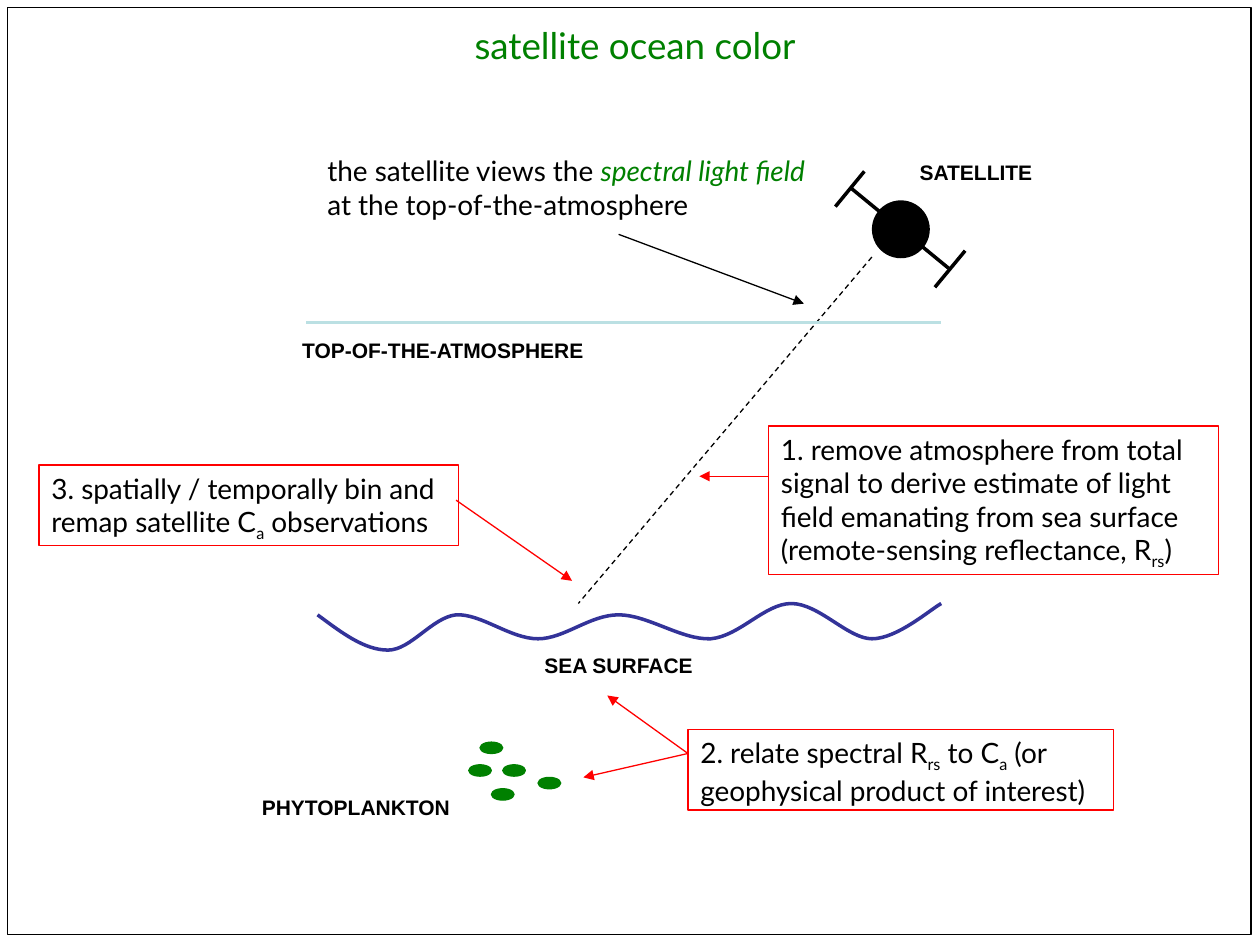
import pptx
import pptx.util
import pptx.dml.color
import pptx.enum.dml
import pptx.enum.shapes
import pptx.enum.text
import pptx.oxml
import pptx.oxml.ns
from lxml import etree

Inches = pptx.util.Inches
Pt = pptx.util.Pt
RGB = pptx.dml.color.RGBColor
SHAPE = pptx.enum.shapes.MSO_SHAPE
ALIGN = pptx.enum.text.PP_ALIGN
qn = pptx.oxml.ns.qn

BLACK = RGB(0, 0, 0)
GREEN = RGB(0, 0x80, 0)
RED = RGB(0xFF, 0, 0)
NAVY = RGB(0x33, 0x33, 0x99)
SKY = RGB(0xBB, 0xE0, 0xE3)

# Start point, then two handles and an end point for each curve
WAVE = [
    (2.52, 4.88),
    (2.71, 5.02), (2.89, 5.16), (3.08, 5.16),
    (3.26, 5.16), (3.43, 4.9), (3.62, 4.88),
    (3.82, 4.87), (4.05, 5.07), (4.27, 5.07),
    (4.48, 5.07), (4.68, 4.88), (4.91, 4.88),
    (5.14, 4.88), (5.41, 5.08), (5.64, 5.07),
    (5.87, 5.05), (6.07, 4.79), (6.28, 4.79),
    (6.5, 4.79), (6.73, 5.07), (6.92, 5.07),
    (7.12, 5.07), (7.38, 4.84), (7.47, 4.79),
]
CELLS = [(3.72, 6.07), (3.9, 6.26), (3.99, 6.07), (4.27, 6.17), (3.81, 5.89)]
LABELS = [
    ("SEA SURFACE", (3.58, 5.13, 2.66, 0.33), ALIGN.CENTER),
    ("TOP-OF-THE-ATMOSPHERE", (2.3, 2.63, 2.7, 0.33), ALIGN.LEFT),
    ("SATELLITE", (7.2, 1.22, 1.28, 0.33), ALIGN.LEFT),
    ("PHYTOPLANKTON", (1.98, 6.26, 2.25, 0.33), ALIGN.LEFT),
]
# Box, text pieces (every second one is a subscript), arrow start, arrow tips
STEPS = [
    ((6.1, 3.38, 3.57, 1.18),
     ["1. remove atmosphere from total signal to derive estimate of light "
      "field emanating from sea surface (remote-sensing reflectance, R",
      "rs", ")"],
     (6.1, 3.78), [(5.55, 3.78)]),
    ((5.46, 5.79, 3.38, 0.64),
     ["2. relate spectral R", "rs", " to C", "a",
      " (or geophysical product of interest)"],
     (5.46, 5.98), [(4.82, 5.52), (4.63, 6.17)]),
    ((0.31, 3.69, 3.33, 0.64),
     ["3. spatially / temporally bin and remap satellite C", "a",
      " observations"],
     (3.62, 3.97), [(4.54, 4.61)]),
]


def add_form(shapes, kind, box, fill=None, line=None):
    form = shapes.add_shape(kind, *map(Inches, box))
    form.shadow.inherit = False
    if fill is None:
        form.fill.background()
    else:
        form.fill.solid()
        form.fill.fore_color.rgb = fill
    if line is None:
        form.line.fill.background()
    else:
        form.line.color.rgb = line
        form.line.width = Pt(0.75)
    return form


def add_line(shapes, start, end, color=BLACK, width=0.75, dash=False, arrow=False):
    line = shapes.add_connector(pptx.enum.shapes.MSO_CONNECTOR.STRAIGHT,
                                *map(Inches, start + end))
    line.line.color.rgb = color
    line.line.width = Pt(width)
    if dash:
        line.line.dash_style = pptx.enum.dml.MSO_LINE.DASH
    if arrow:
        tail = etree.SubElement(line.line._get_or_add_ln(), qn("a:tailEnd"))
        tail.set("type", "triangle")
    etree.SubElement(line._element.spPr, qn("a:effectLst"))


def set_text(form, pieces, size, face="Lato", color=BLACK, align=ALIGN.LEFT):
    """Write the pieces as runs of one paragraph and return the paragraph."""
    frame = form.text_frame
    frame.word_wrap = True
    frame.auto_size = pptx.enum.text.MSO_AUTO_SIZE.SHAPE_TO_FIT_TEXT
    frame.vertical_anchor = pptx.enum.text.MSO_ANCHOR.TOP
    para = frame.paragraphs[0]
    para.alignment = align
    para.font.size = Pt(size)
    para.font.name = face
    para.font.color.rgb = color
    for piece in pieces:
        para.add_run().text = piece
    return para


def add_text(shapes, box, *args, **style):
    return set_text(shapes.add_textbox(*map(Inches, box)), *args, **style)


def add_wave(shapes):
    """Draw the points as straight lines, then join each three as a curve."""
    points = [(Inches(x), Inches(y)) for x, y in WAVE]
    pen = shapes.build_freeform(*points[0])
    pen.add_line_segments(points[1:], close=False)
    wave = pen.convert_to_shape()
    wave.shadow.inherit = False
    wave.fill.background()
    wave.line.color.rgb = NAVY
    wave.line.width = Pt(2)
    parts = list(wave._element.iter(qn("a:lnTo")))
    for first in range(0, len(parts), 3):
        trio = parts[first:first + 3]
        curve = etree.Element(qn("a:cubicBezTo"))
        trio[0].addprevious(curve)
        for part in trio:
            curve.append(part[0])
            part.getparent().remove(part)


def add_craft(shapes):
    craft = shapes.add_group_shape().shapes
    add_form(craft, SHAPE.OVAL, (6.92, 1.59, 0.46, 0.46), BLACK)
    for start, end in [((6.75, 1.49), (7.53, 2.13)),
                       ((6.86, 1.36), (6.63, 1.64)),
                       ((7.66, 1.99), (7.42, 2.28))]:
        add_line(craft, start, end, width=2)


def add_step(shapes, box, pieces, start, tips):
    group = shapes.add_group_shape().shapes
    para = set_text(add_form(group, SHAPE.RECTANGLE, box, line=RED), pieces, 16)
    for run in para.runs[1::2]:
        run._r.get_or_add_rPr().set("baseline", "-25000")
    for tip in tips:
        add_line(group, start, tip, RED, arrow=True)


def main():
    deck = pptx.Presentation()
    deck.slide_width, deck.slide_height = Inches(10), Inches(7.5)
    shapes = deck.slides.add_slide(deck.slide_layouts[6]).shapes

    add_form(shapes, SHAPE.RECTANGLE, (0.06, 0.06, 9.87, 7.36), line=BLACK)
    add_wave(shapes)
    add_craft(shapes)
    add_line(shapes, (6.92, 2.04), (4.59, 4.79), dash=True)
    add_line(shapes, (2.43, 2.56), (7.47, 2.56), SKY, 2)
    for text, box, align in LABELS:
        add_text(shapes, box, [text], 12, "Arial", align=align).font.bold = True

    view = add_text(shapes, (2.5, 1.17, 4.08, 0.64),
                    ["the satellite views the ", "spectral light field",
                     " at the top-of-the-atmosphere"], 16)
    view.runs[1].font.italic = True
    view.runs[1].font.color.rgb = GREEN
    add_line(shapes, (4.91, 1.86), (6.38, 2.41), arrow=True)

    for x, y in CELLS:
        add_form(shapes, SHAPE.OVAL, (x, y, 0.18, 0.09), GREEN, GREEN)
    for step in STEPS:
        add_step(shapes, *step)
    add_text(shapes, (0.25, 0.13, 9.58, 0.45), ["satellite ocean color"], 21,
             color=GREEN, align=ALIGN.CENTER)
    deck.save("out.pptx")


if __name__ == "__main__":
    main()
